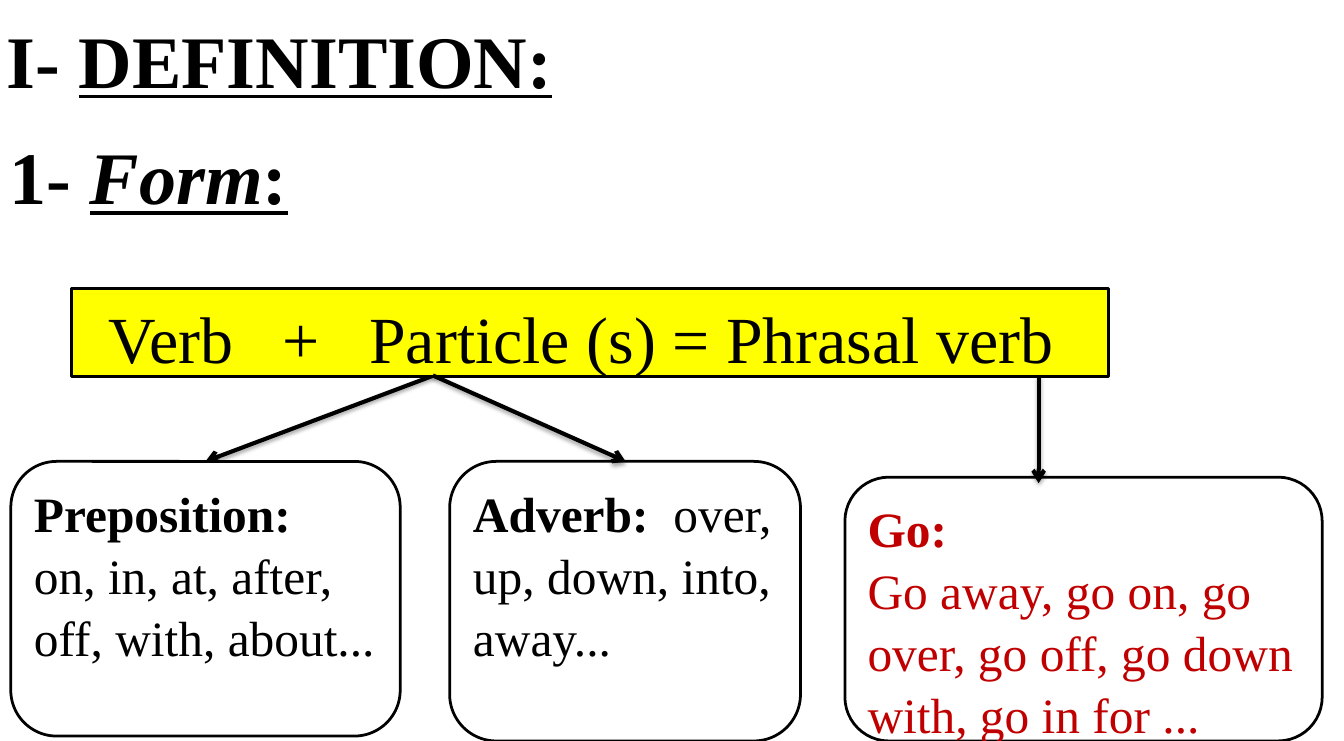
from lxml import etree
from pptx import Presentation
from pptx.dml.color import RGBColor
from pptx.enum.shapes import MSO_CONNECTOR, MSO_SHAPE
from pptx.enum.text import MSO_ANCHOR, PP_ALIGN
from pptx.oxml import parse_xml
from pptx.oxml.ns import nsdecls, qn
from pptx.util import Inches, Pt

FONT = "Times New Roman"
BLACK, WHITE, YELLOW, RED = "000000", "FFFFFF", "FFFF00", "C00000"
SHADOW = (
    f'<a:effectLst {nsdecls("a")}>'
    '<a:outerShdw blurRad="39400" dist="22900" dir="5400000" rotWithShape="0">'
    '<a:srgbClr val="000000"><a:alpha val="35000"/></a:srgbClr>'
    '</a:outerShdw></a:effectLst>'
)


def rgb(color):
    return RGBColor.from_string(color)


def add_run(p, text, size, color=BLACK, bold=False, italic=False,
            underline=False, spacing=0):
    r = p.add_run()
    r.text = text
    font = r.font
    font.name, font.size = FONT, Pt(size)
    font.bold, font.italic, font.underline = bold, italic, underline
    font.color.rgb = rgb(color)
    if spacing:
        font._element.set("spc", str(spacing * 100))


def fill_text(tf, paragraphs, size, color=BLACK, align=PP_ALIGN.LEFT):
    """Each paragraph is a list of (text, run options)."""
    tf.word_wrap = True
    for i, runs in enumerate(paragraphs):
        p = tf.add_paragraph() if i else tf.paragraphs[0]
        p.alignment = align
        p.line_spacing = 1.05
        for text, options in runs:
            add_run(p, text, size, color, **options)


def add_heading(s, left, top, runs):
    sp = s.shapes.add_textbox(Inches(left), Inches(top), Inches(10.99), Inches(1.01))
    sp.text_frame.margin_top = Inches(0.08)
    fill_text(sp.text_frame, [runs], 54)


def add_box(s, kind, left, top, width, height, fill):
    sp = s.shapes.add_shape(kind, Inches(left), Inches(top),
                            Inches(width), Inches(height))
    sp.shadow.inherit = False
    sp.fill.solid()
    sp.fill.fore_color.rgb = rgb(fill)
    sp.line.color.rgb = rgb(BLACK)
    sp.line.width = Pt(2)
    return sp


def add_card(s, left, top, width, height, paragraphs, color=BLACK):
    sp = add_box(s, MSO_SHAPE.FLOWCHART_ALTERNATE_PROCESS,
                 left, top, width, height, WHITE)
    sp.text_frame.vertical_anchor = MSO_ANCHOR.TOP
    fill_text(sp.text_frame, paragraphs, 36, color)


def add_arrow(s, x1, y1, x2, y2):
    line = s.shapes.add_connector(MSO_CONNECTOR.STRAIGHT, Inches(x1), Inches(y1),
                                  Inches(x2), Inches(y2))
    line.line.color.rgb = rgb(BLACK)
    line.line.width = Pt(3)
    etree.SubElement(line.line._get_or_add_ln(), qn("a:tailEnd"), type="arrow")
    line._element.spPr.append(parse_xml(SHADOW))


def main():
    prs = Presentation()
    prs.slide_width, prs.slide_height = Inches(13.6), Inches(7.5)
    s = prs.slides.add_slide(prs.slide_layouts[6])
    bold = {"bold": True}

    # Headings
    add_heading(s, -0.03, 0.02, [
        ("I- ", bold), ("DEFINITION:", {"bold": True, "underline": True})])
    add_heading(s, 0, 1.2, [
        ("1- ", bold),
        ("Form", {"bold": True, "italic": True, "underline": True}),
        (":", {"bold": True, "underline": True})])

    # Formula, with the preposition arrow starting behind it
    add_arrow(s, 4.55, 3.74, 2.08, 4.67)
    formula = add_box(s, MSO_SHAPE.RECTANGLE, 0.72, 2.92, 10.5, 0.89, YELLOW)
    tf = formula.text_frame
    tf.vertical_anchor = MSO_ANCHOR.MIDDLE
    tf.margin_top, tf.margin_right = Inches(0.1), Inches(0.27)
    wide_gap = (" ", {"spacing": 24})
    fill_text(tf, [[("Verb", {}), wide_gap, ("+", {}), wide_gap,
                    ("Particle (s) = Phrasal verb", {})]],
              48, align=PP_ALIGN.CENTER)

    # Cards
    add_card(s, 0.11, 4.67, 3.94, 2.78, [
        [("Preposition:", bold)],
        [("on, in, at, after, off, with, about...", {})]])
    add_card(s, 4.55, 4.67, 3.55, 2.83, [
        [("Adverb:", bold), (" ", {"spacing": 9}),
         ("over, up, down, into, away...", {})]])
    add_card(s, 8.55, 4.83, 4.83, 2.67, [
        [("Go:", bold)],
        [("Go away, go on, go over, go off, go down with, go in for ...", {})]], RED)

    # Arrows that lie over the cards
    add_arrow(s, 4.38, 3.8, 6.33, 4.67)
    add_arrow(s, 10.51, 3.8, 10.51, 4.89)

    prs.save("out.pptx")


if __name__ == "__main__":
    main()
